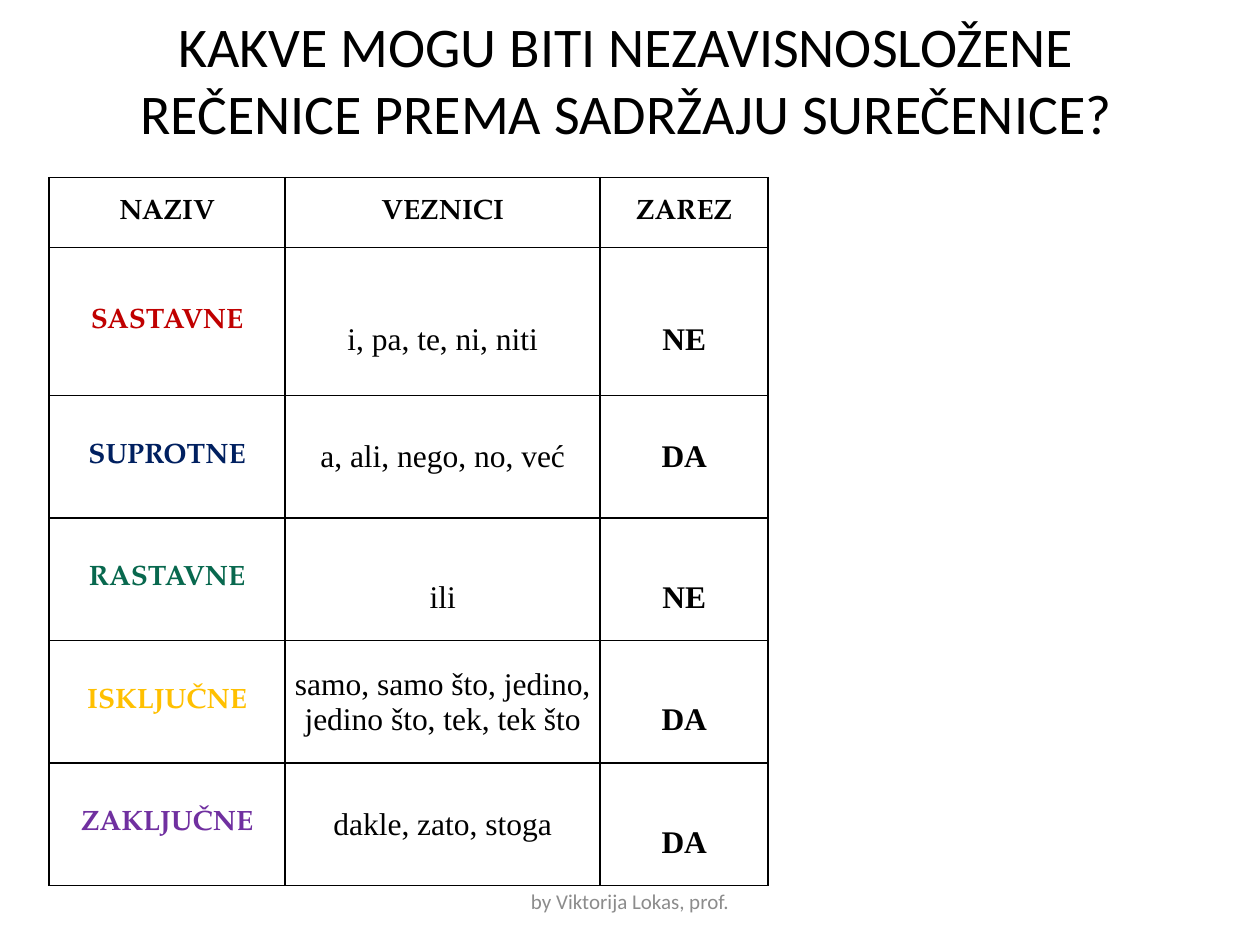
from lxml.etree import SubElement
from pptx import Presentation
from pptx.dml.color import RGBColor
from pptx.enum.text import MSO_ANCHOR as Anchor, PP_ALIGN as Align
from pptx.oxml.ns import qn
from pptx.util import Pt

BLACK = "000000"
NAME_FONT = "TeX Gyre Pagella"
BODY_FONT = "Times New Roman"
COLUMN_WIDTHS = [135, 180, 96]
ROW_HEIGHTS = [40, 84.6, 70, 70, 70, 70]
HEADINGS = ["NAZIV", "VEZNICI", "ZAREZ"]
LOWERED = 20.7  # top inset, one text line high

# name, name colour, conjunctions, their top inset, comma, its top inset
SENTENCE_TYPES = [
    ("SASTAVNE", "C00000", "i, pa, te, ni, niti", LOWERED, "NE", LOWERED),
    ("SUPROTNE", "002060", "a, ali, nego, no, već", 0, "DA", 0),
    ("RASTAVNE", "08684E", "ili", LOWERED, "NE", LOWERED),
    ("ISKLJUČNE", "FFC000", "samo, samo što, jedino, jedino što, tek, tek što",
     0, "DA", LOWERED),
    ("ZAKLJUČNE", "7030A0", "dakle, zato, stoga", 0, "DA", LOWERED),
]


def rgb(value):
    return RGBColor.from_string(value)


def write(frame, text, font="Calibri", size=18, color=BLACK, bold=False):
    frame.word_wrap = True
    para = frame.paragraphs[0]
    para.alignment = Align.CENTER
    span = para.add_run()
    span.text = text
    span.font.name = font
    span.font.size = Pt(size)
    span.font.bold = bold
    span.font.color.rgb = rgb(color)


def add_text(page, left, top, width, height, text, **style):
    box = page.shapes.add_textbox(Pt(left), Pt(top), Pt(width), Pt(height))
    box.text_frame.vertical_anchor = Anchor.MIDDLE
    write(box.text_frame, text, **style)


def add_borders(cell, color=BLACK, width=1):
    properties = cell._tc.get_or_add_tcPr()
    for index, side in enumerate(["a:lnL", "a:lnR", "a:lnT", "a:lnB"]):
        line = SubElement(properties, qn(side), w=str(Pt(width)))
        fill = SubElement(line, qn("a:solidFill"))
        SubElement(fill, qn("a:srgbClr"), val=color)
        properties.insert(index, line)  # borders precede the cell fill


def fill_cell(cell, text, inset=None, **style):
    """Write a cell; a given inset is its top margin, with narrow sides."""
    cell.fill.background()
    cell.vertical_anchor = Anchor.MIDDLE
    if inset is not None:
        cell.margin_left = cell.margin_right = Pt(5)
        cell.margin_top, cell.margin_bottom = Pt(inset), Pt(0)
    add_borders(cell)
    write(cell.text_frame, text, **style)


def add_sentence_table(page, left, top):
    table = page.shapes.add_table(
        len(ROW_HEIGHTS), len(COLUMN_WIDTHS), Pt(left), Pt(top),
        Pt(sum(COLUMN_WIDTHS)), Pt(sum(ROW_HEIGHTS))).table
    table.first_row = table.horz_banding = False
    for column, width in zip(table.columns, COLUMN_WIDTHS):
        column.width = Pt(width)
    for row, height in zip(table.rows, ROW_HEIGHTS):
        row.height = Pt(height)

    name_style = dict(font=NAME_FONT, size=16, bold=True)
    for index, heading in enumerate(HEADINGS):
        fill_cell(table.cell(0, index), heading, **name_style)
    for index, sentence_type in enumerate(SENTENCE_TYPES, start=1):
        name, color, words, words_inset, comma, comma_inset = sentence_type
        fill_cell(table.cell(index, 0), name, color=color, **name_style)
        fill_cell(table.cell(index, 1), words, words_inset, font=BODY_FONT)
        fill_cell(table.cell(index, 2), comma, comma_inset, font=BODY_FONT,
                  bold=True)


def main():
    deck = Presentation()
    deck.slide_width, deck.slide_height = Pt(720), Pt(540)
    page = deck.slides.add_slide(deck.slide_layouts[6])
    add_text(page, 34, 0, 648, 90,
             "KAKVE MOGU BITI NEZAVISNOSLOŽENE REČENICE PREMA SADRŽAJU "
             "SUREČENICE?", size=32)
    add_sentence_table(page, 28, 101.5)
    add_text(page, 246, 500.5, 228, 28.8, "by Viktorija Lokas, prof.",
             size=12, color="8C8C8C")
    deck.save("out.pptx")


if __name__ == "__main__":
    main()
